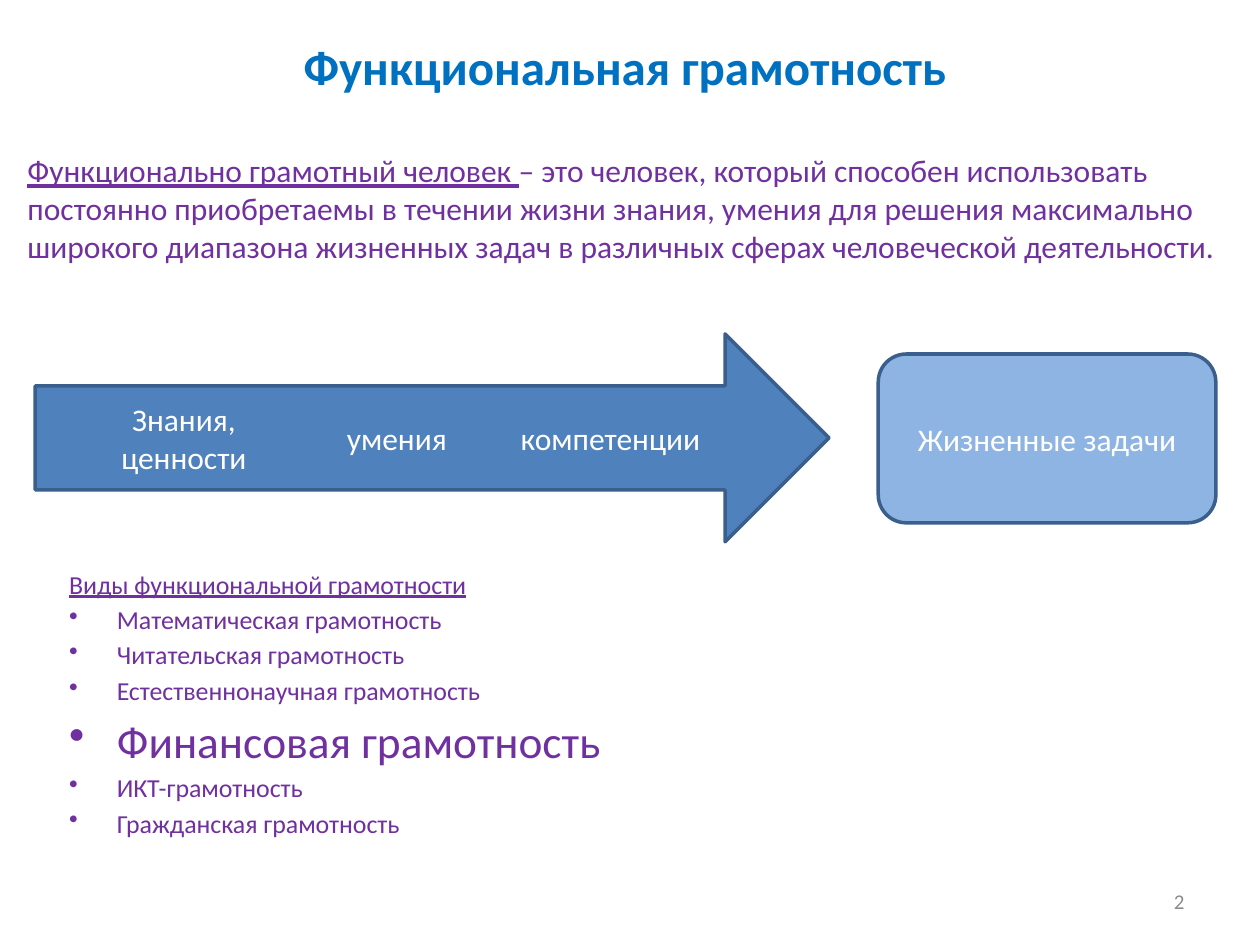
"""Build the functional literacy slide."""
import dataclasses
import typing

import lxml.etree
import pptx
import pptx.dml.color
import pptx.enum.shapes
import pptx.enum.text
import pptx.oxml.ns
import pptx.util

Inches = pptx.util.Inches
Pt = pptx.util.Pt
Shapes = pptx.enum.shapes.MSO_SHAPE
Align = pptx.enum.text.PP_ALIGN
Anchor = pptx.enum.text.MSO_ANCHOR


@dataclasses.dataclass(frozen=True)
class Theme:
    """Colours and type sizes of the slide."""

    font: str = "Calibri"
    title: str = "0070C0"
    text: str = "7030A0"
    arrow: str = "4F81BD"
    task: str = "8EB4E3"
    outline: str = "3A5F8C"
    light: str = "FFFFFF"
    number: str = "8C8C8C"
    title_size: float = 28
    text_size: float = 18
    list_size: float = 14.8
    highlight_size: float = 25.9
    number_size: float = 12
    outline_width: float = 2


class Box(typing.NamedTuple):
    """Place of an object in inches."""

    left: float
    top: float
    width: float
    height: float

    def lengths(self) -> list[pptx.util.Length]:
        """Return the four values as lengths."""
        return [Inches(value) for value in self]


@dataclasses.dataclass(frozen=True)
class Block:
    """A filled shape with optional centred text."""

    box: Box
    kind: Shapes
    fill: str
    text: str = ""
    outlined: bool = False


@dataclasses.dataclass(frozen=True)
class Literacy:
    """One kind of literacy in the list."""

    name: str
    size: float


THEME = Theme()
LABEL_TOP, LABEL_HEIGHT = 3.28, 0.39
BULLET_INDENT = 0.38
LABELS = [
    (0.75, 1.42, "Знания,\nценности"),
    (2.64, 1.02, "умения"),
    (3.98, 1.73, "компетенции"),
]
BLOCKS = [
    Block(Box(0.28, 2.65, 6.3, 1.65), Shapes.RIGHT_ARROW, THEME.arrow, outlined=True),
    Block(Box(6.97, 2.81, 2.68, 1.34), Shapes.ROUNDED_RECTANGLE, THEME.task,
          "Жизненные задачи", True),
] + [
    Block(Box(left, LABEL_TOP, width, LABEL_HEIGHT), Shapes.RECTANGLE, THEME.arrow, text)
    for left, width, text in LABELS
]
LITERACIES = [
    Literacy("Математическая грамотность", THEME.list_size),
    Literacy("Читательская грамотность", THEME.list_size),
    Literacy("Естественнонаучная грамотность", THEME.list_size),
    Literacy("Финансовая грамотность", THEME.highlight_size),
    Literacy("ИКТ-грамотность", THEME.list_size),
    Literacy("Гражданская грамотность", THEME.list_size),
]
LIST_HEADING = "Виды функциональной грамотности"
TERM = "Функционально грамотный человек "
DEFINITION = [
    "– это человек, который способен использовать",
    "постоянно приобретаемы в течении жизни знания, умения для решения максимально",
    "широкого диапазона жизненных задач в различных сферах человеческой деятельности.",
]


def rgb(value: str) -> pptx.dml.color.RGBColor:
    """Return the colour for a hexadecimal value."""
    return pptx.dml.color.RGBColor.from_string(value)


def format_text(text_frame, size: float, color: str, align=Align.LEFT) -> None:
    """Format every paragraph and run of a text frame."""
    for paragraph in text_frame.paragraphs:
        paragraph.alignment = align
        for run in paragraph.runs:
            run.font.name = THEME.font
            run.font.size = Pt(size)
            run.font.color.rgb = rgb(color)


def add_text(slide, box: Box, text: str, wrap: bool = True):
    """Add a text box and return its text frame."""
    text_frame = slide.shapes.add_textbox(*box.lengths()).text_frame
    text_frame.word_wrap = wrap
    text_frame.text = text
    return text_frame


def add_title(slide) -> None:
    """Fill and place the title placeholder."""
    title = slide.shapes.title
    title.left, title.top, title.width, title.height = Box(2.31, 0.29, 5.6, 0.47).lengths()
    title.text_frame.text = "Функциональная грамотность"
    title.text_frame.vertical_anchor = Anchor.MIDDLE
    format_text(title.text_frame, THEME.title_size, THEME.title)
    title.text_frame.paragraphs[0].runs[0].font.bold = True


def add_definition(slide) -> None:
    """Add the definition with its underlined term."""
    text_frame = add_text(slide, Box(0.12, 1.15, 9.67, 1.01),
                          "\n".join([TERM] + DEFINITION[1:]), wrap=False)
    opening = text_frame.paragraphs[0]
    opening.runs[0].font.underline = True
    opening.add_run().text = DEFINITION[0]
    format_text(text_frame, THEME.text_size, THEME.text)


def add_block(slide, block: Block) -> None:
    """Draw one filled shape."""
    shape = slide.shapes.add_shape(block.kind, *block.box.lengths())
    shape.shadow.inherit = False
    shape.fill.solid()
    shape.fill.fore_color.rgb = rgb(block.fill)
    if block.outlined:
        shape.line.color.rgb = rgb(THEME.outline)
        shape.line.width = Pt(THEME.outline_width)
    else:
        shape.line.fill.background()
    if block.text:
        text_frame = shape.text_frame
        text_frame.text = block.text
        text_frame.word_wrap = True
        text_frame.margin_left = text_frame.margin_right = 0
        text_frame.vertical_anchor = Anchor.MIDDLE
        format_text(text_frame, THEME.text_size, THEME.light, Align.CENTER)


def add_bullet(paragraph) -> None:
    """Give a paragraph a hanging bullet."""
    properties = paragraph._p.get_or_add_pPr()
    properties.set("marL", str(Inches(BULLET_INDENT)))
    properties.set("indent", str(-Inches(BULLET_INDENT)))
    bullet = lxml.etree.SubElement(properties, pptx.oxml.ns.qn("a:buChar"))
    bullet.set("char", "•")


def add_literacies(slide) -> None:
    """Add the list of kinds of literacy."""
    names = [literacy.name for literacy in LITERACIES]
    text_frame = add_text(slide, Box(0.45, 4.46, 9, 2.28), "\n".join([LIST_HEADING] + names))
    format_text(text_frame, THEME.list_size, THEME.text)
    heading, *items = text_frame.paragraphs
    heading.runs[0].font.underline = True
    for paragraph, literacy in zip(items, LITERACIES):
        paragraph.runs[0].font.size = Pt(literacy.size)
        paragraph.space_before = Pt(round(literacy.size / 6, 1))
        add_bullet(paragraph)


def main() -> None:
    """Build and save the presentation."""
    presentation = pptx.Presentation()
    presentation.slide_width, presentation.slide_height = Inches(10), Inches(7.5)
    slide = presentation.slides.add_slide(presentation.slide_layouts.get_by_name("Title Only"))
    add_title(slide)
    add_literacies(slide)
    add_definition(slide)
    for block in BLOCKS:
        add_block(slide, block)
    number = add_text(slide, Box(7.17, 6.95, 2.33, 0.4), "2")
    number.vertical_anchor = Anchor.MIDDLE
    format_text(number, THEME.number_size, THEME.number, Align.RIGHT)
    presentation.save("out.pptx")


if __name__ == "__main__":
    main()
